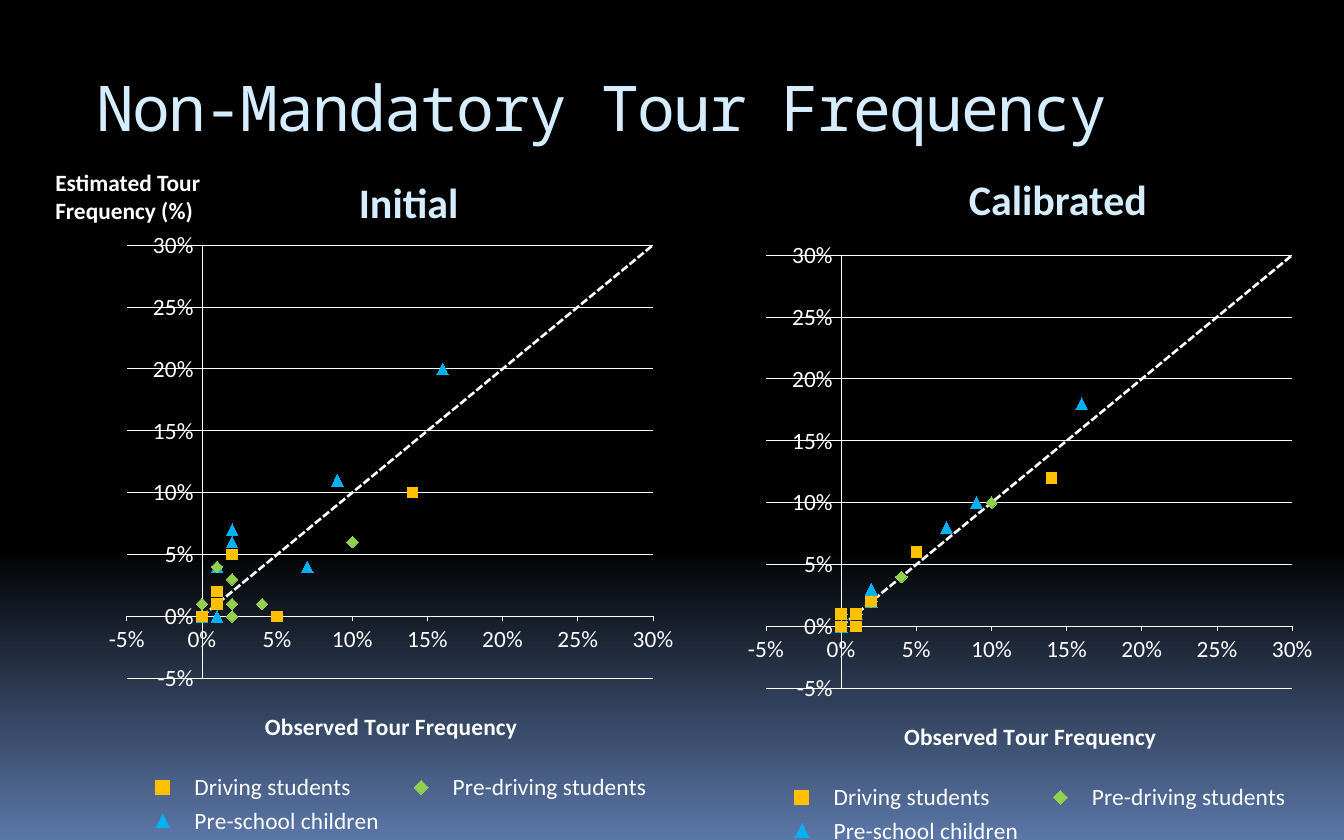
from copy import deepcopy
from dataclasses import dataclass

from lxml.etree import SubElement
from pptx import Presentation
from pptx.chart.data import XyChartData
from pptx.dml.color import RGBColor
from pptx.enum.chart import XL_CHART_TYPE as ChartType
from pptx.enum.chart import XL_LEGEND_POSITION as LegendPosition
from pptx.enum.chart import XL_MARKER_STYLE as Marker
from pptx.enum.chart import XL_TICK_MARK as TickMark
from pptx.enum.dml import MSO_LINE as Dash
from pptx.enum.text import MSO_ANCHOR as Anchor
from pptx.enum.text import PP_ALIGN as Align
from pptx.oxml.ns import qn
from pptx.util import Pt

COLORS = {
    "black": "000000", "horizon": "5B77A8", "white": "FFFFFF", "heading": "D6ECFF",
    "driving": "FFC000", "pre_driving": "92D050", "pre_school": "00B0F0",
}
BODY_FONT = "Calibri"
TITLE_FONT = "Noto Sans Mono"


@dataclass
class Group:
    """One student group, with its observed frequencies."""
    name: str
    color: str
    marker: Marker
    size: int
    observed: list[float]


@dataclass
class Panel:
    """One scatter chart; estimates follow the order of GROUPS."""
    left: float
    top: float
    estimates: list[list[float]]


@dataclass
class Label:
    text: str
    left: float
    top: float
    width: float
    height: float
    size: int
    color: str
    align: Align


GROUPS = [
    Group("Driving students", "driving", Marker.SQUARE, 9,
          [0.14, 0.01, 0.01, 0.01, 0.01, 0.02, 0.05, 0, 0, 0]),
    Group("Pre-driving students", "pre_driving", Marker.DIAMOND, 10,
          [0.1, 0.01, 0.02, 0.02, 0.01, 0.04, 0.02, 0, 0, 0]),
    Group("Pre-school children", "pre_school", Marker.TRIANGLE, 10,
          [0.07, 0.16, 0.02, 0.02, 0.01, 0.01, 0, 0.09, 0, 0.01]),
]
PANELS = [
    Panel(83.5, 187.2, [
        [0.1, 0.02, 0.02, 0.01, 0.01, 0.05, 0, 0, 0, 0],
        [0.06, 0.04, 0.03, 0.01, 0.01, 0.01, 0, 0, 0.01, 0],
        [0.04, 0.2, 0.07, 0.06, 0.01, 0.04, 0, 0.11, 0, 0],
    ]),
    Panel(631.4, 195.8, [
        [0.12, 0, 0.01, 0, 0.01, 0.02, 0.06, 0, 0, 0.01],
        [0.1, 0.01, 0.02, 0.02, 0.01, 0.04, 0.02, 0, 0.01, 0],
        [0.08, 0.18, 0.03, 0.02, 0.01, 0.01, 0, 0.1, 0.01, 0.01],
    ]),
]
LABELS = [
    Label("Estimated Tour Frequency (%)", 40.3, 140.4, 191.5, 55.4, 20, "white", Align.LEFT),
    Label("Initial", 268.6, 147.6, 163.4, 51.1, 36, "heading", Align.CENTER),
    Label("Calibrated", 812.9, 145.4, 187.9, 51.1, 36, "heading", Align.CENTER),
]


def rgb(name: str) -> RGBColor:
    return RGBColor.from_string(COLORS[name])


def style_font(font, size: float, color: str, bold: bool = False, name: str = BODY_FONT) -> None:
    font.name, font.size, font.bold = name, Pt(size), bold
    font.color.rgb = rgb(color)


def paint_background(slide) -> None:
    fill = slide.background.fill
    fill.gradient()
    fill.gradient_angle = 270
    first_stop = next(slide.element.iter(qn("a:gs")))
    first_stop.addnext(deepcopy(first_stop))
    stops = [(0, "black"), (0.65, "black"), (1, "horizon")]
    for stop, (position, color) in zip(fill.gradient_stops, stops):
        stop.position = position
        stop.color.rgb = rgb(color)


def add_title(slide, text: str) -> None:
    title = slide.shapes.title
    title.left, title.top, title.width, title.height = Pt(72), Pt(54), Pt(1022.4), Pt(95.8)
    frame = title.text_frame
    frame.vertical_anchor = Anchor.TOP
    frame.margin_left = frame.margin_right = Pt(10.8)
    frame.margin_top = frame.margin_bottom = Pt(5)
    frame.paragraphs[0].alignment = Align.LEFT
    run = frame.paragraphs[0].add_run()
    run.text = text
    style_font(run.font, 54, "heading", name=TITLE_FONT)
    run.font._element.set("spc", "-150")


def add_label(slide, label: Label) -> None:
    box = slide.shapes.add_textbox(Pt(label.left), Pt(label.top), Pt(label.width), Pt(label.height))
    box.text_frame.word_wrap = True
    paragraph = box.text_frame.paragraphs[0]
    paragraph.alignment = label.align
    run = paragraph.add_run()
    run.text = label.text
    style_font(run.font, label.size, label.color, bold=True)


def place_plot(plot_area, **fractions: float) -> None:
    """Place the inner plot by fractions of the chart area."""
    for old in plot_area.findall(qn("c:layout")):
        plot_area.remove(old)
    layout = SubElement(plot_area, qn("c:layout"))
    plot_area.insert(0, layout)
    manual = SubElement(layout, qn("c:manualLayout"))
    settings = {"layoutTarget": "inner", "xMode": "edge", "yMode": "edge", **fractions}
    for tag, value in settings.items():
        SubElement(manual, qn(f"c:{tag}")).set("val", str(value))


def style_axis(axis) -> None:
    axis.minimum_scale, axis.maximum_scale, axis.major_unit = -0.05, 0.3, 0.05
    axis.major_tick_mark, axis.minor_tick_mark = TickMark.OUTSIDE, TickMark.NONE
    axis.tick_labels.number_format = "0%"
    axis.tick_labels.number_format_is_linked = False
    style_font(axis.tick_labels.font, 20, "white")
    axis.format.line.color.rgb = rgb("white")
    axis.format.line.width = Pt(0.75)


def style_legend(chart, hidden_entry: int) -> None:
    chart.has_legend = True
    legend = chart.legend
    legend.position = LegendPosition.BOTTOM
    legend.include_in_layout = False
    style_font(legend.font, 20, "white")
    entry = SubElement(legend._element, qn("c:legendEntry"))
    SubElement(entry, qn("c:idx")).set("val", str(hidden_entry))
    SubElement(entry, qn("c:delete")).set("val", "1")
    legend._element.insert(1, entry)


def add_scatter(slide, panel: Panel) -> None:
    data = XyChartData(number_format="0%")
    for group, estimated in zip(GROUPS, panel.estimates):
        points = data.add_series(group.name)
        for x, y in zip(group.observed, estimated):
            points.add_data_point(x, y)
    diagonal = data.add_series("Series 4")
    for end in (0, 0.3):
        diagonal.add_data_point(end, end)

    chart = slide.shapes.add_chart(ChartType.XY_SCATTER, Pt(panel.left), Pt(panel.top),
                                   Pt(504), Pt(532.8), data).chart
    chart.has_title = False
    style_font(chart.font, 10, "white")
    plot = chart.plots[0]
    plot.vary_by_categories = False
    place_plot(chart._chartSpace.chart.plotArea, x=0.05, y=0.043, w=0.895, h=0.697)

    # Axes and gridlines
    observed_axis, estimated_axis = chart.category_axis, chart.value_axis
    for axis in (observed_axis, estimated_axis):
        style_axis(axis)
    observed_axis.has_major_gridlines = False
    estimated_axis.has_major_gridlines = True
    estimated_axis.major_gridlines.format.line.color.rgb = rgb("white")
    estimated_axis.major_gridlines.format.line.width = Pt(0.75)
    caption = observed_axis.axis_title.text_frame.paragraphs[0].add_run()
    caption.text = "Observed Tour Frequency"
    style_font(caption.font, 20, "white", bold=True)

    # Student groups as markers, equality as a dashed diagonal
    *group_series, equality = plot.series
    for group, series in zip(GROUPS, group_series):
        series.smooth = False
        series.format.line.fill.background()
        series.marker.style, series.marker.size = group.marker, group.size
        series.marker.format.fill.solid()
        series.marker.format.fill.fore_color.rgb = rgb(group.color)
        series.marker.format.line.fill.background()
    equality.smooth = False
    equality.marker.style = Marker.NONE
    equality.format.line.color.rgb = rgb("white")
    equality.format.line.width = Pt(2.25)
    equality.format.line.dash_style = Dash.SQUARE_DOT
    style_legend(chart, hidden_entry=len(GROUPS))


def main() -> None:
    deck = Presentation()
    deck.slide_width, deck.slide_height = Pt(1152), Pt(720)
    slide = deck.slides.add_slide(deck.slide_layouts[5])
    paint_background(slide)
    add_title(slide, "Non-Mandatory Tour Frequency")
    for panel in PANELS:
        add_scatter(slide, panel)
    for label in LABELS:
        add_label(slide, label)
    deck.save("out.pptx")


if __name__ == "__main__":
    main()
